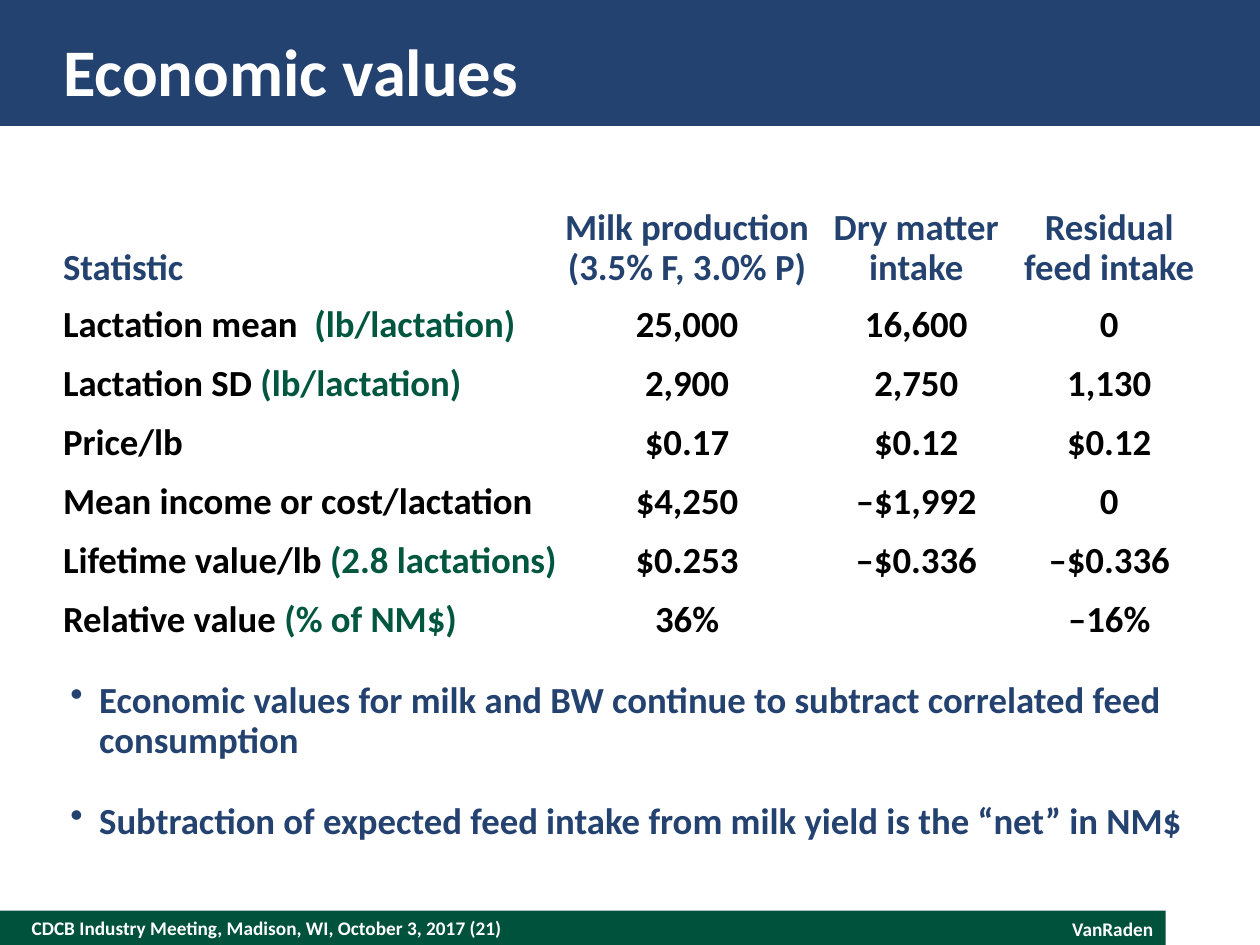
from pptx import Presentation
from pptx.dml.color import RGBColor
from pptx.enum.shapes import MSO_SHAPE
from pptx.enum.text import MSO_ANCHOR, PP_ALIGN
from pptx.oxml.ns import qn
from pptx.util import Cm, Pt
from lxml import etree

LEFT, CENTER, RIGHT = PP_ALIGN.LEFT, PP_ALIGN.CENTER, PP_ALIGN.RIGHT
TOP, MIDDLE, BOTTOM = MSO_ANCHOR.TOP, MSO_ANCHOR.MIDDLE, MSO_ANCHOR.BOTTOM
RECTANGLE = MSO_SHAPE.RECTANGLE

COLORS = {"navy": "244270", "footer": "00523C", "green": "00563F",
          "black": "000000", "white": "FFFFFF"}
FONT = "Calibri"

# Content: a cell is a list of paragraphs, a paragraph is a list of spans
TITLE = "Economic values"
HEADER = [["Statistic"], ["Milk production", "(3.5% F, 3.0% P)"],
          ["Dry matter intake"], ["Residual feed intake"]]
ROWS = [  # label, unit, values
    ("Lactation mean  ", "(lb/lactation)", ["25,000", "16,600", "0"]),
    ("Lactation SD ", "(lb/lactation)", ["2,900", "2,750", "1,130"]),
    ("Price/lb", "", ["$0.17", "$0.12", "$0.12"]),
    ("Mean income or cost/lactation", "", ["$4,250", "–$1,992", "0"]),
    ("Lifetime value/lb ", "(2.8 lactations)", ["$0.253", "–$0.336", "–$0.336"]),
    ("Relative value ", "(% of NM$)", ["36%", "", "–16%"]),
]
BULLETS = [
    "Economic values for milk and BW continue to subtract correlated feed consumption",
    "Subtraction of expected feed intake from milk yield is the “net” in NM$",
]
FOOTER_LEFT = "CDCB Industry Meeting, Madison, WI, October 3, 2017 (21)"
FOOTER_RIGHT = "VanRaden"

COLUMN_WIDTHS = [10.08, 5.0, 4.24, 3.54]
ROW_HEIGHTS = [2.13] + [1.19] * 5 + [1.35]


def write(frame, paragraphs, size=21, color="navy", align=LEFT, line=None,
          gap=0, bullet=False):
    """Fill a text frame; a span is a string or a (string, colour) pair."""
    for index, spans in enumerate(paragraphs):
        para = frame.add_paragraph() if index else frame.paragraphs[0]
        para.alignment = align
        if line:
            para.line_spacing = Pt(line)
        if index and gap:
            para.space_before = Pt(gap)
        if bullet:
            properties = para._p.get_or_add_pPr()
            properties.set("marL", str(Cm(0.58)))
            properties.set("indent", str(-Cm(0.58)))
            etree.SubElement(properties, qn("a:buChar")).set("char", "•")
        for item in spans:
            text, shade = item if isinstance(item, tuple) else (item, color)
            span = para.add_run()
            span.text = text
            span.font.name, span.font.size, span.font.bold = FONT, Pt(size), True
            span.font.color.rgb = RGBColor.from_string(COLORS[shade])


def set_margins(target, left=0, top=0, right=0, bottom=0):
    target.margin_left, target.margin_top = Cm(left), Cm(top)
    target.margin_right, target.margin_bottom = Cm(right), Cm(bottom)


def add_band(page, left, top, width, height, color):
    band = page.shapes.add_shape(RECTANGLE, Cm(left), Cm(top), Cm(width), Cm(height))
    band.shadow.inherit = False
    band.fill.solid()
    band.fill.fore_color.rgb = RGBColor.from_string(COLORS[color])
    band.line.fill.background()


def add_text(page, left, top, width, height, anchor=TOP):
    frame = page.shapes.add_textbox(Cm(left), Cm(top), Cm(width), Cm(height)).text_frame
    frame.word_wrap = True
    frame.vertical_anchor = anchor
    set_margins(frame)
    return frame


def add_values_table(page):
    table = page.shapes.add_table(
        len(ROWS) + 1, len(HEADER), Cm(1.27), Cm(3.81),
        Cm(sum(COLUMN_WIDTHS)), Cm(sum(ROW_HEIGHTS))).table
    table.first_row = table.horz_banding = False
    for column, width in zip(table.columns, COLUMN_WIDTHS):
        column.width = Cm(width)
    for row, height in zip(table.rows, ROW_HEIGHTS):
        row.height = Cm(height)

    grid = [[[[line] for line in lines] for lines in HEADER]]
    for label, unit, values in ROWS:
        name = [label] + ([(unit, "green")] if unit else [])
        grid.append([[name]] + [[[value]] for value in values])

    for r, cells in enumerate(grid):
        for c, paragraphs in enumerate(cells):
            cell = table.cell(r, c)
            cell.fill.background()
            cell.vertical_anchor = TOP if r else BOTTOM
            set_margins(cell, bottom=0 if r else 0.08)
            write(cell.text_frame, paragraphs, color="black" if r else "navy",
                  align=CENTER if c else LEFT, line=30 if r else 23)


def main():
    deck = Presentation()
    deck.slide_width, deck.slide_height = Cm(25.4), Cm(19.05)
    page = deck.slides.add_slide(deck.slide_layouts[5])

    # Bands and footer
    add_band(page, 0, 18.36, 23.5, 0.69, "footer")
    add_band(page, 0, 0, 25.4, 2.54, "navy")
    write(add_text(page, 0.64, 18.36, 17.78, 0.69, MIDDLE), [[FOOTER_LEFT]],
          size=11, color="white")
    author = add_text(page, 18.42, 18.36, 5.08, 0.73)
    set_margins(author, 0.25, 0.13, 0.25, 0.13)
    write(author, [[FOOTER_RIGHT]], size=11, color="white", align=RIGHT)

    # Title, raised above its band
    title = page.shapes.title
    page.shapes.element.append(title.element)
    title.left, title.top, title.width, title.height = Cm(1.27), Cm(0.51), Cm(22.86), Cm(1.78)
    title.text_frame.vertical_anchor = MIDDLE
    set_margins(title.text_frame)
    write(title.text_frame, [[TITLE]], size=38, color="white")

    # Table and conclusions
    add_values_table(page)
    write(add_text(page, 1.42, 13.72, 22.61, 3.28), [[text] for text in BULLETS],
          line=23, gap=23, bullet=True)

    deck.save("out.pptx")


if __name__ == "__main__":
    main()
